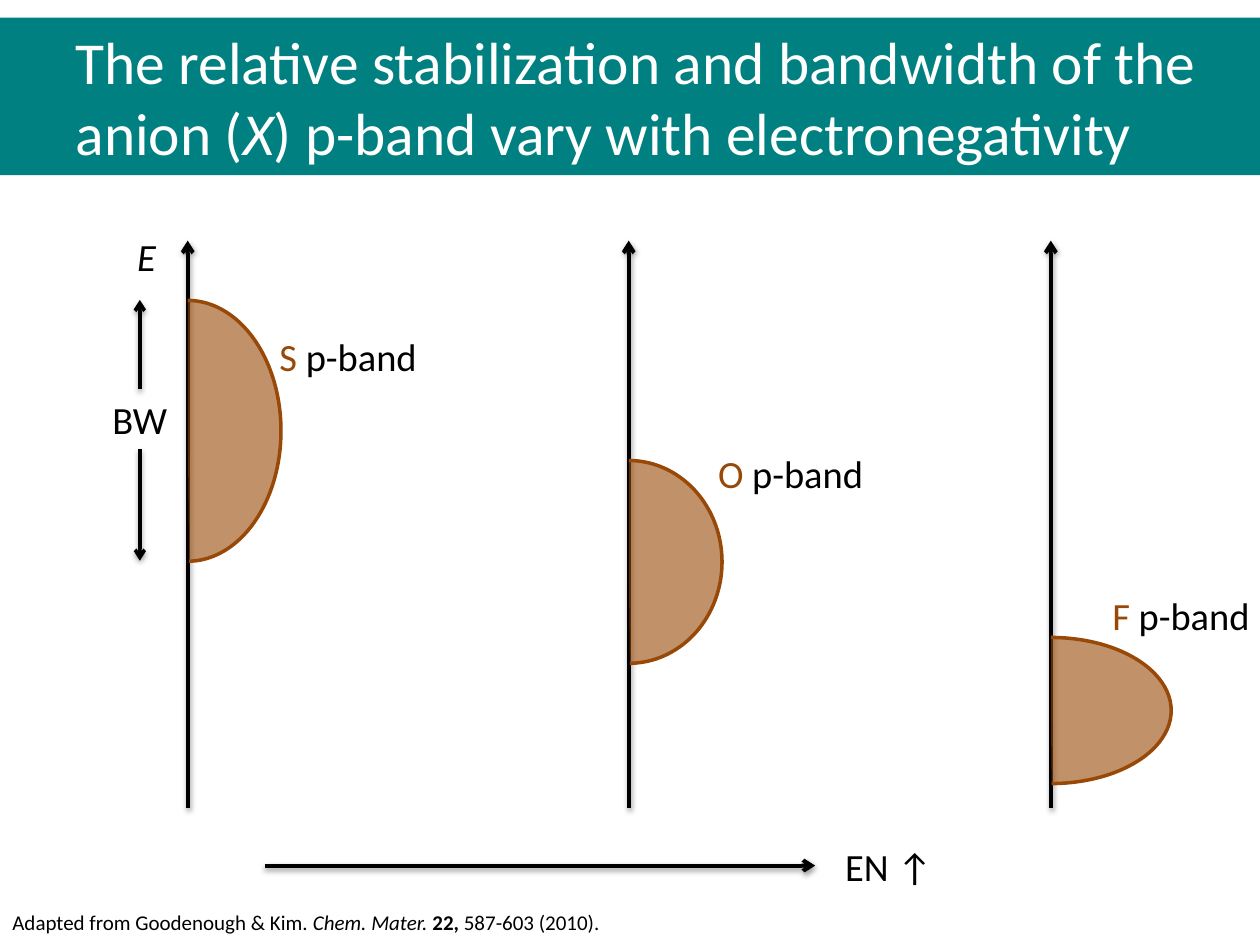
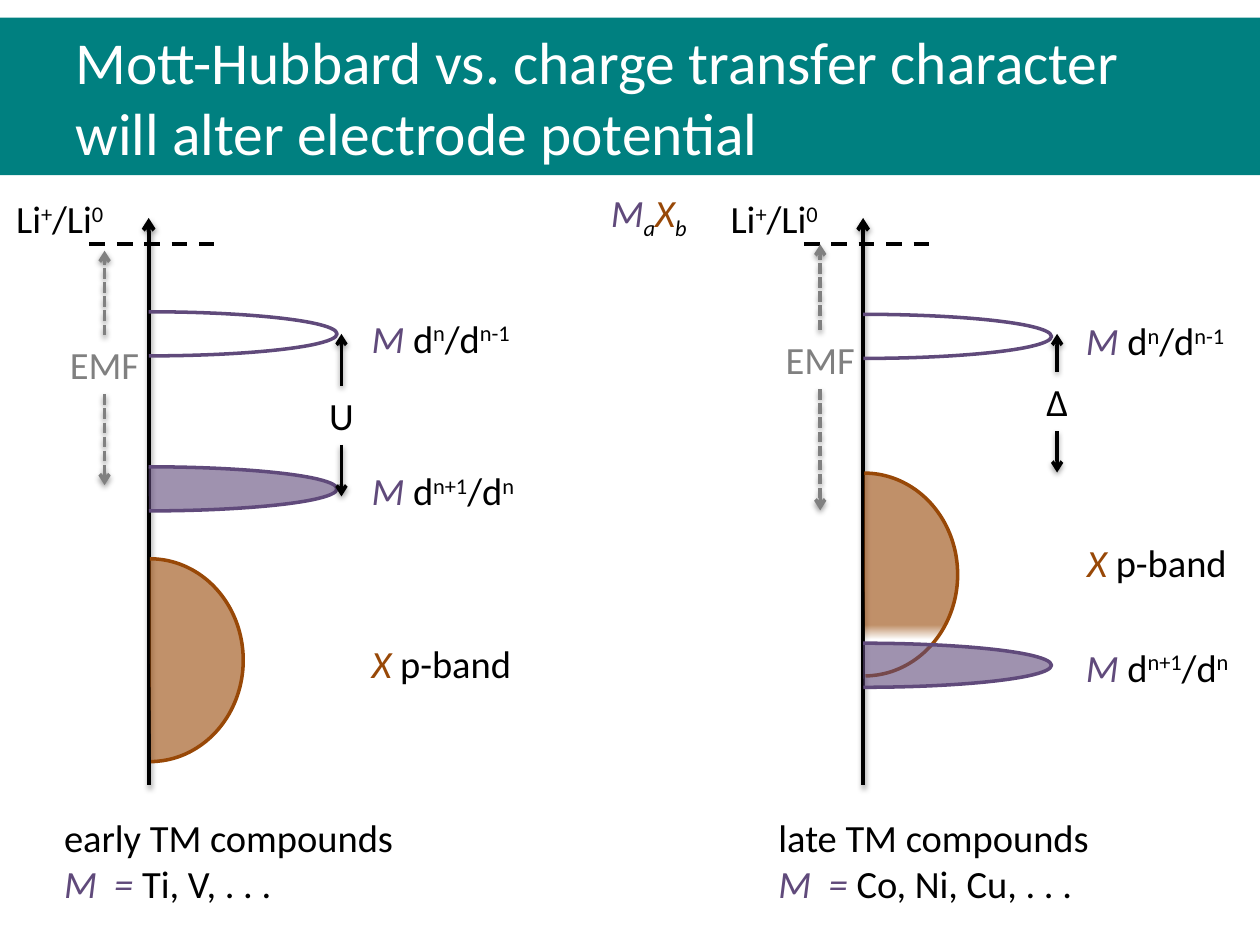
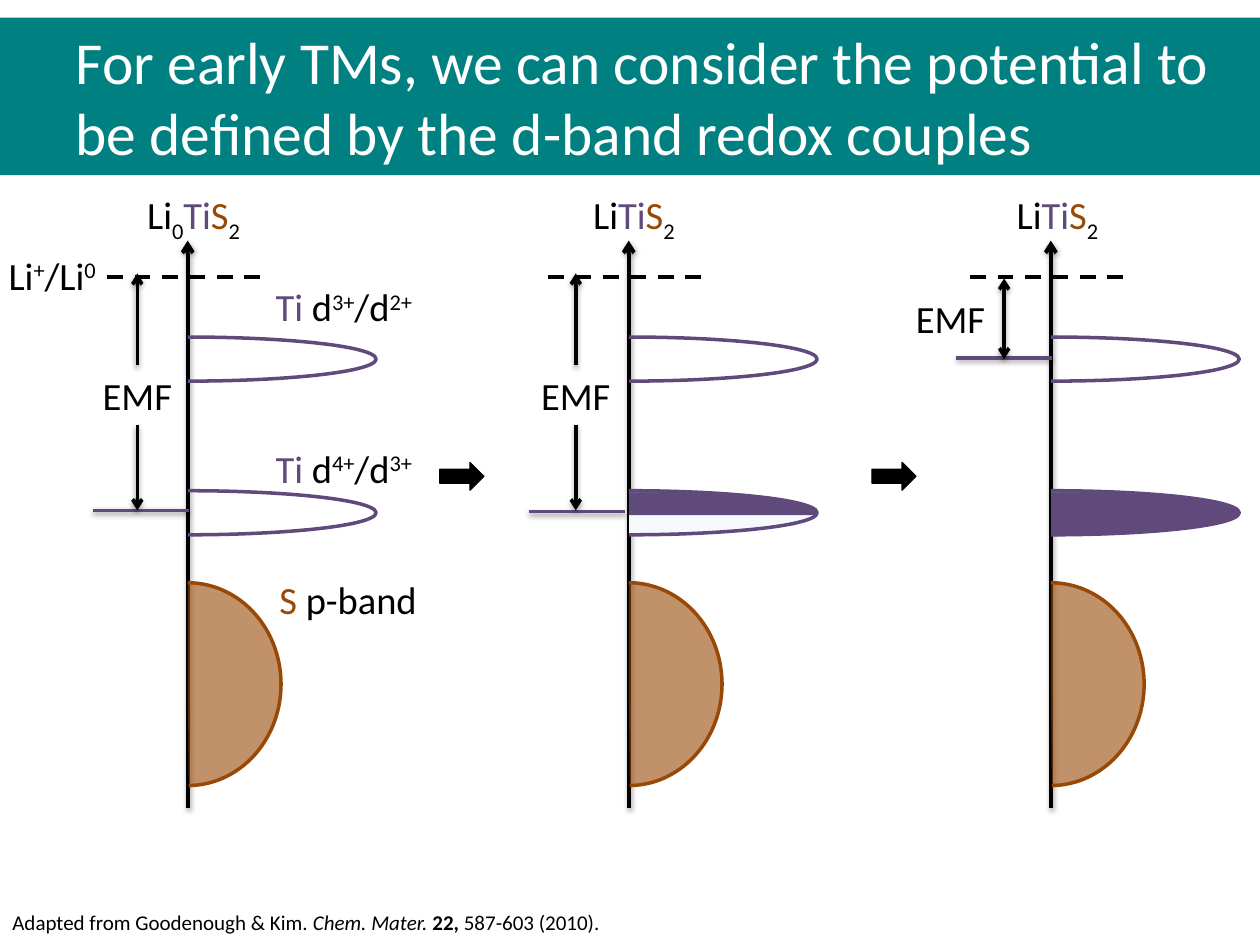
"""Build three slides on band diagrams of transition metal compounds."""
from pptx import Presentation
from pptx.dml.color import RGBColor
from pptx.enum.dml import MSO_LINE
from pptx.enum.shapes import MSO_CONNECTOR, MSO_SHAPE
from pptx.enum.text import MSO_ANCHOR, MSO_AUTO_SIZE, PP_ALIGN
from pptx.oxml import parse_xml
from pptx.oxml.ns import nsdecls, qn
from pptx.util import Inches, Pt

ARC, RIGHT_ARROW = MSO_SHAPE.ARC, MSO_SHAPE.RIGHT_ARROW
STRAIGHT = MSO_CONNECTOR.STRAIGHT
DASH, SHORT_DASH = MSO_LINE.DASH, MSO_LINE.SQUARE_DOT
LEFT, CENTER = PP_ALIGN.LEFT, PP_ALIGN.CENTER
MIDDLE = MSO_ANCHOR.MIDDLE
NO_FIT, GROW = MSO_AUTO_SIZE.NONE, MSO_AUTO_SIZE.SHAPE_TO_FIT_TEXT

FONT = "Calibri"
TEAL, WHITE, BLACK, GRAY = "008080", "FFFFFF", "000000", "808080"
BROWN, PURPLE = "984807", "604A7B"
LABEL_HEIGHT = 0.47
D_SPAN, D_REACH = 0.35, 1.495
P_SPAN, P_REACH = 1.61, 0.74
RIM = [(95, PURPLE), (100, "BDD0E6"), (100, "D9E4F1"), (100, "B0C6E1")]
HALF_FILLED = [(43, "F6F9FC"), (50, PURPLE)] + RIM
FILLED = [(0, "F6F9FC"), (0, PURPLE)] + RIM
FADED = [(18, WHITE), (25, BROWN)]
SHADOW = (
    f'<a:effectLst {nsdecls("a")}><a:outerShdw blurRad="40000" dist="20000" '
    'dir="5400000" rotWithShape="0"><a:srgbClr val="000000">'
    '<a:alpha val="38000"/></a:srgbClr></a:outerShdw></a:effectLst>'
)
NO_SHADOW = f'<a:effectLst {nsdecls("a")}/>'

LI_COUPLE = [("Li", BLACK, ""), ("+", BLACK, "^"), ("/Li", BLACK, ""), ("0", BLACK, "^")]
CITATION = [
    ("Adapted from Goodenough & Kim. ", BLACK, ""),
    ("Chem. Mater. ", BLACK, "i"),
    ("22,", BLACK, "b"),
    (" 587-603 (2010).", BLACK, ""),
]


def color(value):
    """Turn a hex string into a colour."""
    return RGBColor.from_string(value)


def p_band(anion, flags=""):
    """Return the runs that name an anion p-band."""
    return [(anion, BROWN, flags), (" p-band", BLACK, "")]


def couple(metal, upper, lower, flags=""):
    """Return the runs that name a d-band redox couple."""
    return [(metal, PURPLE, flags), (" d", BLACK, ""), (upper, BLACK, "^"),
            ("/d", BLACK, ""), (lower, BLACK, "^")]


def add_runs(p, runs, size):
    """Add (text, colour, flags) runs; flags are i, b, ^ and _."""
    for text, tint, flags in runs:
        r = p.add_run()
        r.text = text
        r.font.name, r.font.size = FONT, Pt(size)
        r.font.color.rgb = color(tint)
        r.font.italic, r.font.bold = "i" in flags, "b" in flags
        if "^" in flags:
            r.font._element.set("baseline", "30000")
        if "_" in flags:
            r.font._element.set("baseline", "-25000")


def indent(p, margin, first):
    """Set the left margin and first-line indent of a paragraph."""
    pPr = p._p.get_or_add_pPr()
    pPr.set("marL", str(Inches(margin)))
    pPr.set("indent", str(Inches(first)))


def add_label(slide, x, y, w, *lines, align=LEFT, wrap=False, size=22, h=LABEL_HEIGHT):
    """Add a text box with one paragraph for each list of runs."""
    box = slide.shapes.add_textbox(Inches(x), Inches(y), Inches(w), Inches(h))
    tf = box.text_frame
    tf.word_wrap = wrap
    tf.auto_size = GROW
    for i, runs in enumerate(lines):
        p = tf.add_paragraph() if i else tf.paragraphs[0]
        p.alignment = align
        add_runs(p, runs, size)
    return box


def add_slide(prs, *title_lines):
    """Add a slide whose title is set on the teal band."""
    slide = prs.slides.add_slide(prs.slide_layouts[5])
    title = slide.shapes.title
    title.left, title.top = Inches(0), Inches(0.14)
    title.width, title.height = Inches(10), Inches(1.25)
    title.fill.solid()
    title.fill.fore_color.rgb = color(TEAL)
    tf = title.text_frame
    tf.word_wrap = True
    tf.auto_size = NO_FIT
    tf.vertical_anchor = MIDDLE
    for i, runs in enumerate(title_lines):
        p = tf.add_paragraph() if i else tf.paragraphs[0]
        p.alignment = LEFT
        indent(p, 0.5, 0)
        add_runs(p, runs, 34)
    return slide


def add_citation(slide):
    """Add the literature reference at the foot of the slide."""
    box = add_label(slide, 0, 7.17, 9.68, CITATION, wrap=True, size=12, h=0.3)
    indent(box.text_frame.paragraphs[0], 0.44, -0.44)


def add_line(slide, start, end, tint=BLACK, width=2.25, dash=None, ends=(), shadow=True):
    """Add a straight line, with arrowheads at the named ends."""
    cx = slide.shapes.add_connector(STRAIGHT, *map(Inches, start + end))
    cx.line.color.rgb = color(tint)
    cx.line.width = Pt(width)
    if dash:
        cx.line.dash_style = dash
    spPr = cx._element.spPr
    for end_name in ends:
        spPr.find(qn("a:ln")).append(
            parse_xml(f'<a:{end_name} {nsdecls("a")} type="arrow"/>'))
    spPr.append(parse_xml(SHADOW if shadow else NO_SHADOW))


def add_axis(slide, x, top=1.91):
    """Add an upward energy axis."""
    add_line(slide, (x, top), (x, top + 4.5), ends=["headEnd"])


def add_reference(slide, left, right, y):
    """Add the dashed lithium reference level."""
    add_line(slide, (left, y), (right, y), dash=DASH, shadow=False)


def add_split_arrow(slide, x, top, gap, bottom, text, tint=BLACK, dash=None):
    """Add a vertical double arrow broken by a centred label."""
    for start, end in ((gap + LABEL_HEIGHT, bottom), (gap, top)):
        add_line(slide, (x, start), (x, end), tint, 2, dash, ["tailEnd"])
    add_label(slide, x - 0.4, gap, 0.8, [(text, tint, "")], align=CENTER, wrap=True)


def gradient(stops, alpha):
    """Return a gradient fill that rises from the bottom of a flipped band."""
    marks = "".join(
        f'<a:gs pos="{pos * 1000}"><a:srgbClr val="{tint}">'
        f'<a:alpha val="{alpha * 1000}"/></a:srgbClr></a:gs>'
        for pos, tint in stops)
    return parse_xml(
        f'<a:gradFill {nsdecls("a")} rotWithShape="0"><a:gsLst>{marks}</a:gsLst>'
        '<a:lin ang="5400000" scaled="0"/></a:gradFill>')


def add_band(slide, x, y, span, reach, tint, filled=True, stops=None, alpha=60):
    """Add a half ellipse that bulges right from the axis at x, centred on y."""
    sp = slide.shapes.add_shape(ARC, Inches(x - span / 2), Inches(y - reach),
                                Inches(span), Inches(2 * reach))
    sp.adjustments[0], sp.adjustments[1] = 108.368, 0
    sp.rotation = 270
    spPr = sp._element.spPr
    spPr.xfrm.set("flipV", "1")
    if stops:
        spPr.find(qn("a:prstGeom")).addnext(gradient(stops, alpha))
    elif filled:
        sp.fill.solid()
        sp.fill.fore_color.rgb = color(tint)
        spPr.find(qn("a:solidFill"))[0].append(
            parse_xml(f'<a:alpha {nsdecls("a")} val="{alpha * 1000}"/>'))
    else:
        sp.fill.background()
    sp.line.color.rgb = color(tint)
    sp.line.width = Pt(2)
    sp.shadow.inherit = False


def add_p_band(slide, x, y, stops=None):
    """Add an anion p-band of the usual size."""
    add_band(slide, x, y, P_SPAN, P_REACH, BROWN, stops=stops)


def add_d_band(slide, x, y, filled=False, stops=None):
    """Add a metal d-band, empty unless told otherwise."""
    add_band(slide, x, y, D_SPAN, D_REACH, PURPLE, filled, stops, 100 if stops else 60)


def add_step_arrow(slide, x):
    """Add a block arrow between two diagrams."""
    sp = slide.shapes.add_shape(RIGHT_ARROW, Inches(x), Inches(3.67), Inches(0.35), Inches(0.22))
    sp.fill.solid()
    sp.fill.fore_color.rgb = color(BLACK)
    sp.line.color.rgb = color(BLACK)
    sp.line.width = Pt(0.75)
    sp.shadow.inherit = False


def electronegativity_slide(prs):
    """Compare the p-bands of three anions."""
    slide = add_slide(prs, [
        ("The relative stabilization and bandwidth of the anion (", WHITE, ""),
        ("X", WHITE, "i"),
        (") p-band vary with electronegativity", WHITE, "")])
    add_citation(slide)
    for anion, x, y, span, reach, label_x, label_y, label_w in (
            ("S", 1.49, 3.42, 2.07, 0.74, 2.12, 2.59, 1.3),
            ("O", 4.99, 4.46, 1.61, 0.74, 5.6, 3.52, 1.38),
            ("F", 8.34, 5.64, 1.16, 0.955, 8.73, 4.65, 1.3)):
        add_axis(slide, x)
        add_band(slide, x, y, span, reach, BROWN)
        add_label(slide, label_x, label_y, label_w, p_band(anion))
    add_label(slide, 0.99, 1.8, 0.35, [("E", BLACK, "i")])
    add_split_arrow(slide, 1.11, 2.38, 3.09, 4.45, "BW")
    add_line(slide, (6.47, 6.87), (2.1, 6.87), ends=["headEnd"])
    add_label(slide, 6.61, 6.64, 0.9, [("EN ↑", BLACK, "")])


def add_character_panel(slide, x, top, p_y, lower_y, upper_y, stops, name, metals):
    """Add the axis, bands and labels of one class of compounds."""
    label_x = x + 1.67
    add_axis(slide, x, top)
    add_p_band(slide, x + 0.01, p_y, stops)
    add_d_band(slide, x, lower_y, filled=True)
    add_d_band(slide, x, upper_y)
    add_label(slide, label_x, upper_y - 0.2, 1.38, couple("M", "n", "n-1", "i"))
    add_label(slide, label_x, lower_y - 0.22, 1.42, couple("M", "n+1", "n", "i"))
    add_reference(slide, x - 0.47, x + 0.52, top + 0.21)
    add_label(slide, x - 1.15, top - 0.23, 0.93, LI_COUPLE)
    add_label(slide, x - 0.77, 6.41, 2.95, [(name, BLACK, "")],
              [("M  = ", PURPLE, "i"), (metals, BLACK, "")], h=0.84)


def character_slide(prs):
    """Contrast early and late transition metal compounds."""
    slide = add_slide(prs, [("Mott-Hubbard vs. charge transfer character", WHITE, "")],
                      [("will alter electrode potential", WHITE, "")])
    add_character_panel(slide, 1.18, 1.73, 5.24, 3.88, 2.65, None,
                        "early TM compounds", "Ti, V, . . .")
    add_character_panel(slide, 6.85, 1.73, 4.56, 5.28, 2.67, FADED,
                        "late TM compounds", "Co, Ni, Cu, . . .")
    add_label(slide, 2.85, 5.03, 1.35, p_band("X", "i"))
    add_label(slide, 8.53, 4.23, 1.35, p_band("X", "i"))
    add_label(slide, 4.75, 1.45, 0.85, [
        ("M", PURPLE, "i"), ("a", BLACK, "i_"), ("X", BROWN, "i"), ("b", BLACK, "i_")])
    add_split_arrow(slide, 2.71, 2.65, 3.06, 3.94, "U")
    add_split_arrow(slide, 8.39, 2.65, 2.95, 3.75, "Δ")
    add_split_arrow(slide, 0.83, 1.99, 2.66, 3.85, "EMF", GRAY, SHORT_DASH)
    add_split_arrow(slide, 6.51, 1.94, 2.62, 4.05, "EMF", GRAY, SHORT_DASH)


def redox_slide(prs):
    """Follow the filling of the d-band in three steps."""
    slide = add_slide(prs, [("For early TMs, we can consider the potential to be defined "
                             "by the d-band redox couples", WHITE, "")])
    add_citation(slide)
    sulfide = [("Ti", PURPLE, ""), ("S", BROWN, ""), ("2", BLACK, "_")]
    lithium = [("Li", BLACK, "")]
    for x, stops, level_x, level, formula_x, formula in (
            (1.49, None, 1.5, 4.05, 1.07, lithium + [("0", BLACK, "_")] + sulfide),
            (4.99, HALF_FILLED, 4.96, 4.06, 4.61, lithium + sulfide),
            (8.34, FILLED, 8.35, 2.84, 7.97, lithium + sulfide)):
        add_axis(slide, x)
        add_p_band(slide, x, 5.43)
        add_d_band(slide, x, 4.07, stops=stops)
        add_d_band(slide, x, 2.85)
        add_reference(slide, x - 0.64, x + 0.64, 2.2)
        if stops:
            add_line(slide, (x, 4.07), (x + 1.49, 4.07), PURPLE, shadow=False)
        add_line(slide, (level_x, level), (level_x - 0.76, level), PURPLE, 2)
        add_label(slide, formula_x, 1.47, 1.05, formula)
    for x in (1.09, 4.57):
        add_split_arrow(slide, x, 2.17, 2.9, 4.05, "EMF")
    add_line(slide, (7.97, 2.21), (7.97, 2.85), width=2, ends=["headEnd", "tailEnd"])
    add_label(slide, 7.17, 2.29, 0.81, [("EMF", BLACK, "")])
    for x in (3.49, 6.92):
        add_step_arrow(slide, x)
    add_label(slide, -0.03, 1.95, 0.93, LI_COUPLE)
    add_label(slide, 2.09, 2.2, 1.36, couple("Ti", "3+", "2+"))
    add_label(slide, 2.09, 3.48, 1.36, couple("Ti", "4+", "3+"))
    add_label(slide, 2.12, 4.52, 1.3, p_band("S"))


def main():
    """Build and save the presentation."""
    prs = Presentation()
    prs.slide_width, prs.slide_height = Inches(10), Inches(7.5)
    electronegativity_slide(prs)
    character_slide(prs)
    redox_slide(prs)
    prs.save("out.pptx")


if __name__ == "__main__":
    main()
